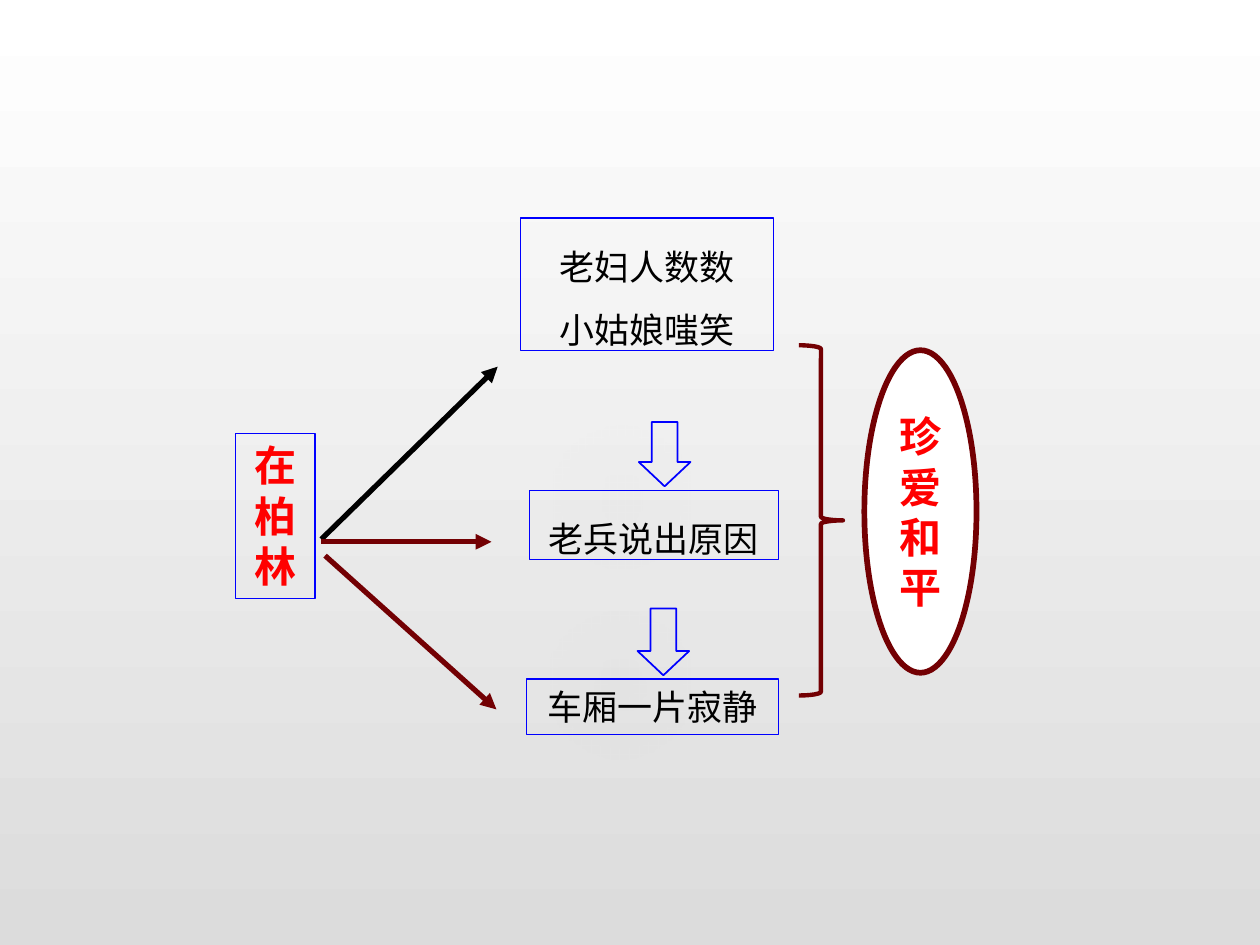
from lxml.etree import SubElement
from pptx import Presentation
from pptx.dml.color import RGBColor
from pptx.enum.shapes import MSO_CONNECTOR, MSO_SHAPE
from pptx.enum.text import MSO_ANCHOR, PP_ALIGN
from pptx.oxml.ns import qn
from pptx.util import Inches, Pt

# Grid of 100 columns by 75 rows
WIDTH, HEIGHT = Inches(10), Inches(7.5)
COL, ROW = WIDTH / 100, HEIGHT / 75
BLUE, BROWN, RED, BLACK, WHITE = "0000FF", "730003", "FF0000", "000000", "FFFFFF"
HAN = "Noto Sans CJK SC"


def color(code):
    return RGBColor.from_string(code)


def place(col, row):
    return round(col * COL), round(row * ROW)


def draw(slide, kind, area, line, weight, fill=None):
    col, row, wide, high = area
    shape = slide.shapes.add_shape(kind, *place(col, row), *place(wide, high))
    shape.shadow.inherit = False
    if fill:
        shape.fill.solid()
        shape.fill.fore_color.rgb = color(fill)
    else:
        shape.fill.background()
    shape.line.color.rgb = color(line)
    shape.line.width = Pt(weight)
    return shape


def write(shape, lines, size, tint, font=HAN, bold=False, gap=None,
          anchor=MSO_ANCHOR.TOP):
    frame = shape.text_frame
    frame.word_wrap = True
    frame.vertical_anchor = anchor
    for i, line in enumerate(lines):
        para = frame.add_paragraph() if i else frame.paragraphs[0]
        para.alignment = PP_ALIGN.CENTER
        if gap:
            para.line_spacing = gap
        run = para.add_run()
        run.text = line
        run.font.name = font
        run.font.size = Pt(size)
        run.font.bold = bold
        run.font.color.rgb = color(tint)
        # Font for Chinese letters
        SubElement(run.font._element, qn("a:ea"), typeface=HAN)


def arrow(slide, start, end, tint):
    line = slide.shapes.add_connector(
        MSO_CONNECTOR.STRAIGHT, *place(*start), *place(*end))
    line.line.color.rgb = color(tint)
    line.line.width = Pt(3)
    SubElement(line.line._get_or_add_ln(), qn("a:tailEnd"), type="triangle")
    SubElement(line._element.spPr, qn("a:effectLst"))


def block(slide, col, row, high):
    shape = draw(slide, MSO_SHAPE.DOWN_ARROW, (col, row, 4.1, high), BLUE, 1)
    shape.adjustments[1] = 0.47
    # Soft shadow to the lower left
    effect = shape._element.spPr.find(qn("a:effectLst"))
    shade = SubElement(effect, qn("a:outerShdw"), blurRad=str(Pt(50)),
                       dist=str(Pt(35)), dir=str(135 * 60000),
                       algn="tr", rotWithShape="0")
    tint = SubElement(shade, qn("a:srgbClr"), val=BLACK)
    SubElement(tint, qn("a:alpha"), val="20000")


def main():
    deck = Presentation()
    deck.slide_width, deck.slide_height = WIDTH, HEIGHT
    slide = deck.slides.add_slide(deck.slide_layouts[6])

    # Background
    back = slide.background.fill
    back.gradient()
    back.gradient_angle = 270
    for stop, tint in zip(back.gradient_stops, (WHITE, "DCDCDC")):
        stop.color.rgb = color(tint)

    # Events in order
    events = [
        ((41.3, 17.3, 20.1, 10.5), ["老妇人数数", "小姑娘嗤笑"], 1.5),
        ((42, 38.9, 19.8, 5.5), ["老兵说出原因"], 1.5),
        ((41.8, 53.9, 20, 4.4), ["车厢一片寂静"], None),
    ]
    for area, lines, gap in events:
        box = draw(slide, MSO_SHAPE.RECTANGLE, area, BLUE, 0.75)
        write(box, lines, 20, BLACK, gap=gap)
    block(slide, 50.6, 48.3, 5.3)
    block(slide, 50.7, 33.5, 5.1)

    # Story title and its arrows
    story = draw(slide, MSO_SHAPE.RECTANGLE, (18.7, 34.4, 6.3, 13.1), BLUE, 0.75)
    write(story, ["在柏林"], 24, RED, "Calibri", True)
    arrow(slide, (25.5, 42.8), (39.5, 29.1), BLACK)
    arrow(slide, (25.5, 43), (39, 43), BROWN)
    arrow(slide, (25.8, 44.1), (39.4, 56.3), BROWN)

    # Theme
    draw(slide, MSO_SHAPE.RIGHT_BRACE, (63.4, 27.4, 3.5, 27.8), BROWN, 2.5)
    theme = draw(slide, MSO_SHAPE.OVAL, (68.6, 27.8, 8.9, 25.6), BROWN, 3.25, WHITE)
    write(theme, ["珍爱和平"], 24, RED, "Arial", True, anchor=MSO_ANCHOR.MIDDLE)

    deck.save("out.pptx")


if __name__ == "__main__":
    main()
